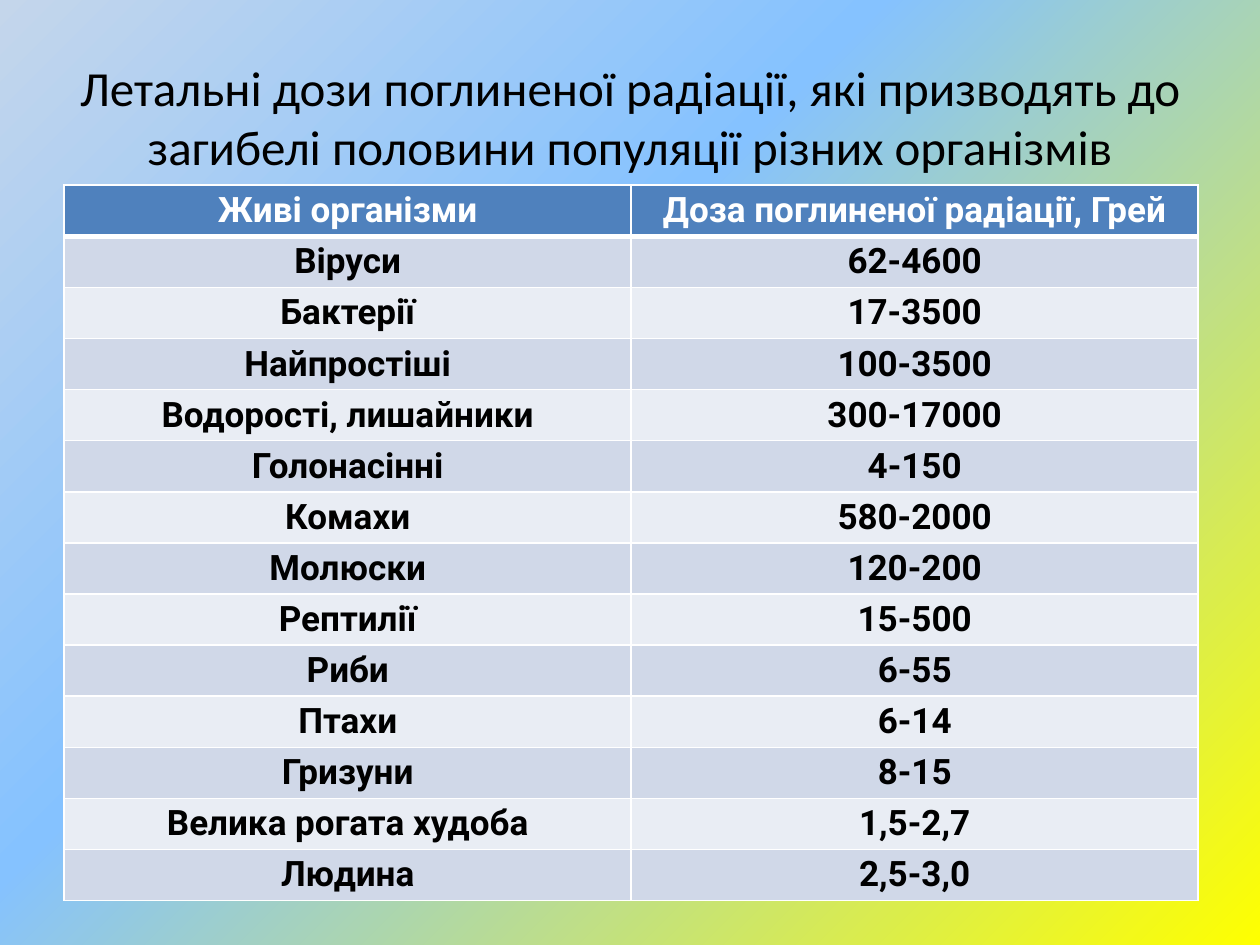
from dataclasses import dataclass

from pptx import Presentation
from pptx.dml.color import RGBColor
from pptx.enum.text import MSO_ANCHOR as Anchor, PP_ALIGN as Align
from pptx.oxml.ns import qn
from pptx.util import Inches, Pt
from lxml.etree import SubElement


@dataclass(frozen=True)
class Theme:
    title_font: str = "Calibri"
    table_font: str = "Roboto"
    title_size: int = 28
    table_size: int = 20
    ink: str = "000000"
    white: str = "FFFFFF"
    header: str = "4F81BD"
    bands: tuple = ("D0D8E8", "E9EDF4")
    backdrop: tuple = ((0, "C4D6EB"), (40, "85C2FF"), (100, "FFFF00"))


THEME = Theme()
TITLE = "Летальні дози поглиненої радіації, які призводять до загибелі половини популяції різних організмів"
DOSES = [
    ("Живі організми", "Доза поглиненої радіації, Грей"),
    ("Віруси", "62-4600"),
    ("Бактерії", "17-3500"),
    ("Найпростіші", "100-3500"),
    ("Водорості, лишайники", "300-17000"),
    ("Голонасінні", "4-150"),
    ("Комахи", "580-2000"),
    ("Молюски", "120-200"),
    ("Рептилії", "15-500"),
    ("Риби", "6-55"),
    ("Птахи", "6-14"),
    ("Гризуни", "8-15"),
    ("Велика рогата худоба", "1,5-2,7"),
    ("Людина", "2,5-3,0"),
]


def write_text(frame, text, *, font, size, color, bold=False):
    paragraph = frame.paragraphs[0]
    paragraph.alignment = Align.CENTER
    run = paragraph.add_run()
    run.text = text
    run.font.name = font
    run.font.size = Pt(size)
    run.font.bold = bold
    run.font.color.rgb = RGBColor.from_string(color)


def paint_backdrop(slide):
    fill = slide.background.fill
    fill.gradient()
    fill.gradient_angle = 315
    stops = next(slide.element.iter(qn("a:gsLst")))
    for stop in list(stops):
        stops.remove(stop)
    for percent, color in THEME.backdrop:
        stop = SubElement(stops, qn("a:gs"), pos=str(percent * 1000))
        SubElement(stop, qn("a:srgbClr"), val=color)


def add_title(slide):
    title = slide.shapes.add_textbox(Inches(0.5), Inches(0.3), Inches(9), Inches(1.25))
    frame = title.text_frame
    frame.word_wrap = True
    frame.vertical_anchor = Anchor.MIDDLE
    write_text(frame, TITLE, font=THEME.title_font, size=THEME.title_size, color=THEME.ink)


def border_cell(cell, **widths):
    properties = cell._tc.get_or_add_tcPr()
    for position, side in enumerate("LRTB"):
        line = properties.makeelement(qn(f"a:ln{side}"), {"w": str(Pt(widths.get(side, 1)))})
        SubElement(SubElement(line, qn("a:solidFill")), qn("a:srgbClr"), val=THEME.white)
        properties.insert(position, line)


def fill_cell(cell, text, row):
    is_header = row == 0
    cell.margin_left = cell.margin_right = cell.margin_top = cell.margin_bottom = 0
    cell.vertical_anchor = Anchor.MIDDLE
    cell.fill.solid()
    background = THEME.header if is_header else THEME.bands[(row - 1) % 2]
    cell.fill.fore_color.rgb = RGBColor.from_string(background)
    border_cell(cell, T=3 if row == 1 else 1, B=3 if is_header else 1)
    write_text(cell.text_frame, text, font=THEME.table_font, size=THEME.table_size,
               color=THEME.white if is_header else THEME.ink, bold=True)


def add_dose_table(slide):
    doses = slide.shapes.add_table(len(DOSES), len(DOSES[0]), Inches(0.51), Inches(1.47),
                                   Inches(9), Inches(5.68)).table
    for row, record in enumerate(DOSES):
        for column, text in enumerate(record):
            fill_cell(doses.cell(row, column), text, row)


def main():
    deck = Presentation()
    deck.slide_width, deck.slide_height = Inches(10), Inches(7.5)
    slide = deck.slides.add_slide(deck.slide_layouts[6])
    paint_backdrop(slide)
    add_title(slide)
    add_dose_table(slide)
    deck.save("out.pptx")


if __name__ == "__main__":
    main()
